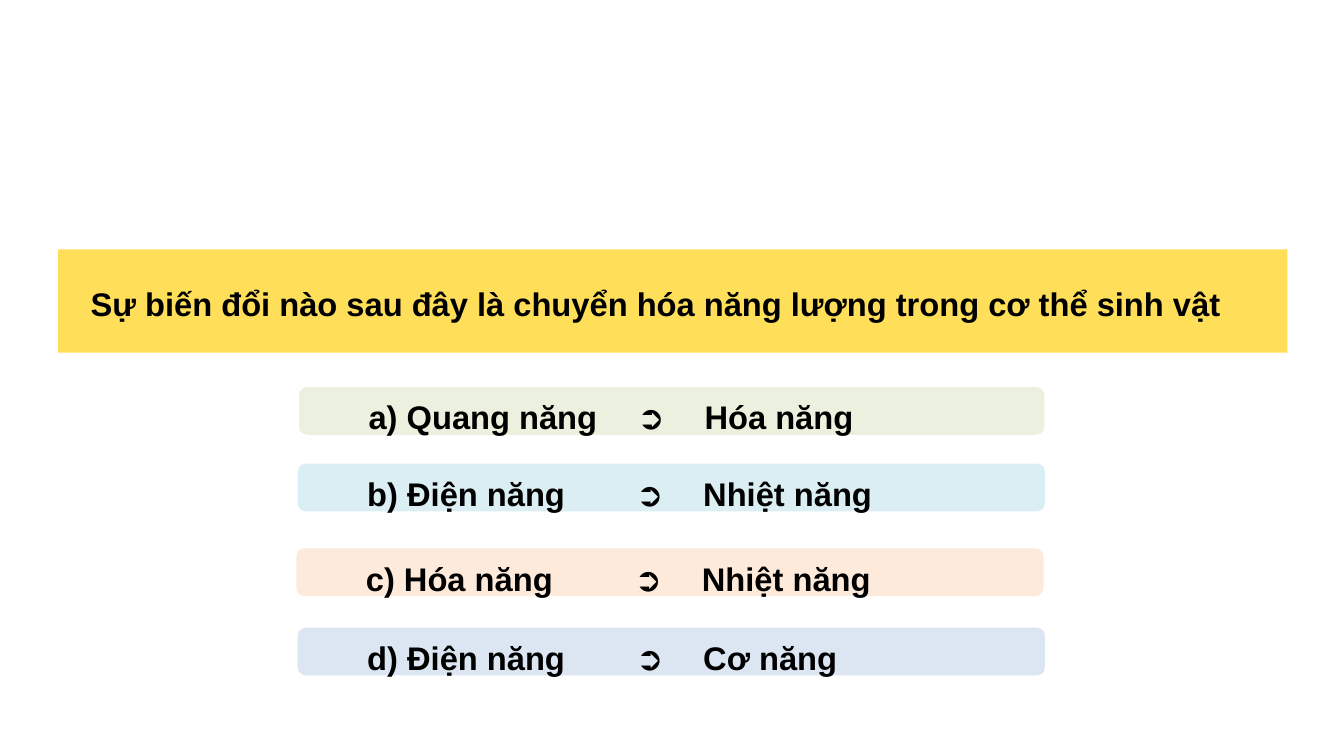
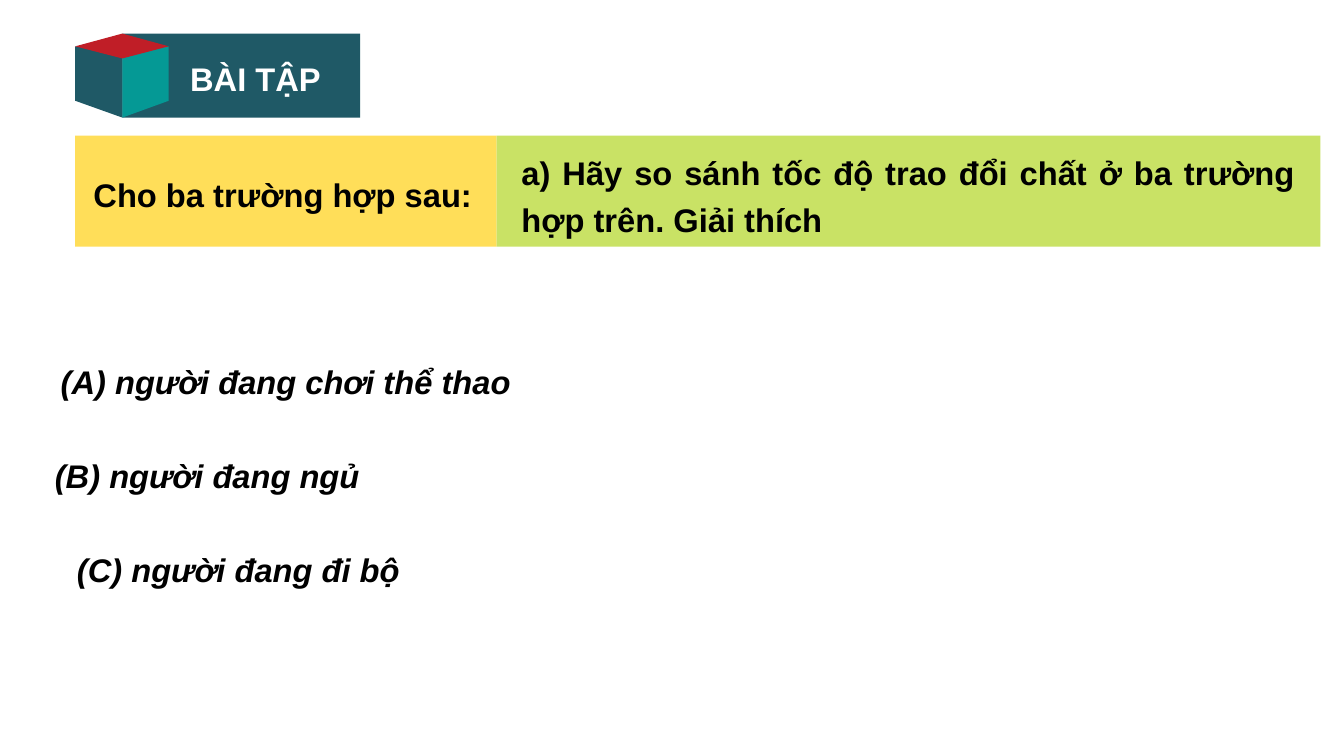
import pptx
import pptx.dml.color
import pptx.enum.shapes
import pptx.enum.text
import pptx.util
import lxml.etree

PX = 9144  # 100 px to the inch
COLOURS = {
    "yellow": "FFDE59", "lime": "C9E265", "navy": "1F5966", "teal": "059995",
    "red": "C01E27", "black": "000000", "white": "FFFFFF", "pale green": "EBF1DE",
    "pale cyan": "DBEEF4", "pale orange": "FDEADA", "pale blue": "DCE6F2",
}
ALIGN = pptx.enum.text.PP_ALIGN
SHAPE = pptx.enum.shapes.MSO_SHAPE
ARROW = "➲"
EXACT = pptx.util.Pt(49)


def paint(shape, colour):
    """Give the shape a plain fill without line or shadow."""
    shape.shadow.inherit = False
    shape.fill.solid()
    shape.fill.fore_color.rgb = pptx.dml.color.RGBColor.from_string(COLOURS[colour])
    shape.line.fill.background()


def write(box, text, colour="black", align=ALIGN.LEFT, spacing=EXACT,
          italic=False, arrow_font="Arial", tabs=()):
    """Fill the box with one paragraph; arrows may take a font of their own."""
    frame = box.text_frame
    frame.word_wrap = True
    frame.vertical_anchor = pptx.enum.text.MSO_ANCHOR.TOP
    frame.margin_left = frame.margin_top = frame.margin_right = frame.margin_bottom = 0
    para = frame.paragraphs[0]
    para.alignment = align
    para.line_spacing = spacing
    if tabs:
        properties = para._p.get_or_add_pPr()
        namespace = "{http://schemas.openxmlformats.org/drawingml/2006/main}"
        tab_list = lxml.etree.SubElement(properties, namespace + "tabLst")
        for stop in tabs:
            lxml.etree.SubElement(tab_list, namespace + "tab", pos=str(stop * PX), algn="l")
    for part in text.partition(ARROW):
        if part:
            span = para.add_run()
            span.text = part
            span.font.name = arrow_font if part == ARROW else "Arial"
            span.font.size = pptx.util.Pt(35)
            span.font.bold = True
            span.font.italic = italic
            span.font.color.rgb = pptx.dml.color.RGBColor.from_string(COLOURS[colour])


deck = pptx.Presentation()
deck.slide_width, deck.slide_height = 2000 * PX, 1125 * PX
blank = deck.slide_layouts[6]
quiz = deck.slides.add_slide(blank)
exercise = deck.slides.add_slide(blank)

# Coloured bands behind the headings
for page, left, top, width, height, colour in [
    (quiz, 86, 371, 1830, 154, "yellow"),
    (exercise, 182, 50, 354, 125, "navy"),
    (exercise, 112, 202, 627, 165, "yellow"),
    (exercise, 739, 202, 1226, 165, "lime"),
]:
    band = page.shapes.add_shape(SHAPE.RECTANGLE, left * PX, top * PX, width * PX, height * PX)
    paint(band, colour)

# Cube beside the exercise label
for colour, corners in [
    ("navy", [(112, 69), (112, 150), (182, 175), (182, 69)]),
    ("teal", [(182, 69), (182, 175), (251, 150), (251, 69)]),
    ("red", [(182, 50), (112, 69), (182, 87), (251, 69)]),
]:
    outline = exercise.shapes.build_freeform(*corners[0], scale=PX)
    outline.add_line_segments(corners[1:], close=True)
    paint(outline.convert_to_shape(), colour)

# Headings and cases
case = {"align": ALIGN.CENTER, "italic": True}
for page, left, top, width, height, text, style in [
    (quiz, 135, 412, 1732, 63,
     "Sự biến đổi nào sau đây là chuyển hóa năng lượng trong cơ thể sinh vật",
     {"align": ALIGN.JUSTIFY}),
    (exercise, 283, 78, 206, 63, "BÀI TẬP", {"colour": "white"}),
    (exercise, 139, 250, 601, 63, "Cho ba trường hợp sau:", {"align": ALIGN.JUSTIFY}),
    (exercise, 776, 216, 1152, 135,
     "a) Hãy so sánh tốc độ trao đổi chất ở ba trường hợp trên. Giải thích",
     {"align": ALIGN.JUSTIFY, "spacing": 1.2}),
    (exercise, 79, 529, 693, 63, "(A) người đang chơi thể thao", case),
    (exercise, 79, 668, 459, 63, "(B) người đang ngủ", case),
    (exercise, 112, 808, 486, 63, "(C) người đang đi bộ", case),
]:
    box = page.shapes.add_textbox(left * PX, top * PX, width * PX, height * PX)
    write(box, text, **style)

# Answer options: energy before and after the change
for left, top, width, colour, before, after, arrow_font in [
    (445, 576, 1109, "pale green", "a) Quang năng", "Hóa năng", "Arial"),
    (443, 690, 1112, "pale cyan", "b) Điện năng", "Nhiệt năng", "Calibri"),
    (441, 816, 1112, "pale orange", "c) Hóa năng", "Nhiệt năng", "Calibri"),
    (443, 934, 1112, "pale blue", "d) Điện năng", "Cơ năng", "Calibri"),
]:
    option = quiz.shapes.add_shape(SHAPE.ROUNDED_RECTANGLE, left * PX, top * PX, width * PX, 71 * PX)
    paint(option, colour)
    write(option, f"\t{before}\t{ARROW}\t{after}", spacing=1.2,
          arrow_font=arrow_font, tabs=(100, 500, 600))

deck.save("out.pptx")
